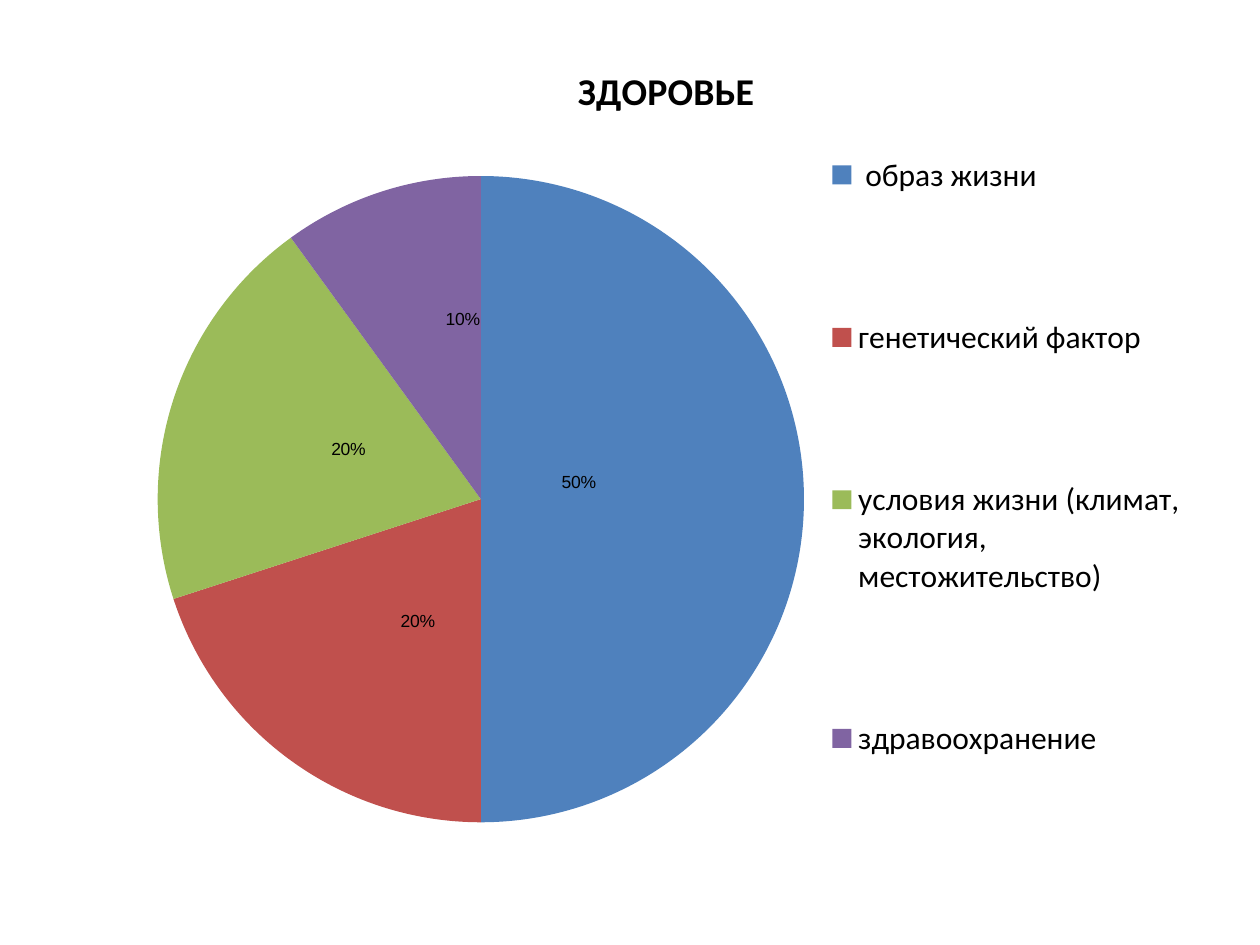
from dataclasses import dataclass
from typing import Optional

from lxml import etree
from pptx import Presentation
from pptx.chart.chart import Chart
from pptx.chart.data import CategoryChartData
from pptx.dml.color import RGBColor
from pptx.enum import chart as kinds
from pptx.oxml.ns import qn
from pptx.util import Inches, Pt

BLACK = RGBColor(0x00, 0x00, 0x00)
BLUE = RGBColor(0x4F, 0x81, 0xBD)
RED = RGBColor(0xC0, 0x50, 0x4D)
GREEN = RGBColor(0x9B, 0xBB, 0x59)
PURPLE = RGBColor(0x80, 0x64, 0xA2)
TITLE = "ЗДОРОВЬЕ"


@dataclass(frozen=True)
class Factor:
    name: str
    share: float
    color: RGBColor
    shift_x: float  # label shift, as a fraction of the chart
    shift_y: float


FACTORS = [
    Factor(" образ жизни", 0.5, BLUE, -0.06, -0.02),
    Factor("генетический фактор", 0.2, RED, 0.03, -0.01),
    Factor("условия жизни (климат, экология, местожительство)", 0.2, GREEN, 0.02, 0),
    Factor("здравоохранение", 0.1, PURPLE, 0.03, -0.03),
]


def set_layout(owner, x: float, y: float, w: Optional[float] = None,
               h: Optional[float] = None, after: Optional[str] = None,
               inner: bool = False, edge: bool = True) -> None:
    """Place a chart part by fractions of the chart's size."""
    for old in owner.findall(qn("c:layout")):
        owner.remove(old)
    layout = etree.Element(qn("c:layout"))
    manual = etree.SubElement(layout, qn("c:manualLayout"))
    settings = []
    if inner:
        settings.append(("layoutTarget", "inner"))
    if edge:
        settings += [("xMode", "edge"), ("yMode", "edge")]
    settings += [("x", x), ("y", y), ("w", w), ("h", h)]
    for tag, value in settings:
        if value is not None:
            etree.SubElement(manual, qn(f"c:{tag}")).set("val", str(value))
    if after:
        owner.find(qn(after)).addnext(layout)
    else:
        owner.insert(0, layout)


def add_title(chart: Chart) -> None:
    chart.has_title = True
    frame = chart.chart_title.text_frame
    frame.text = TITLE
    font = frame.paragraphs[0].font
    font.name, font.size, font.bold = "Calibri", Pt(21.6), True
    font.color.rgb = BLACK
    set_layout(chart.element.xpath("c:chart/c:title")[0], 0.41, 0.03, after="c:tx")


def add_legend(chart: Chart) -> None:
    chart.has_legend = True
    legend = chart.legend
    legend.position = kinds.XL_LEGEND_POSITION.RIGHT
    legend.include_in_layout = False
    set_layout(chart.element.xpath("c:chart/c:legend")[0], 0.64, 0, 0.36, 1,
               after="c:legendPos")


def style_slices(chart: Chart) -> None:
    chart.plots[0].vary_by_categories = True
    series = chart.plots[0].series[0]
    for index, factor in enumerate(FACTORS):
        point = series.points[index]
        point.format.fill.solid()
        point.format.fill.fore_color.rgb = factor.color
        label = point.data_label
        label.position = kinds.XL_LABEL_POSITION.CENTER
        label.font.name, label.font.size = "Arial", Pt(10)
        label.font.color.rgb = BLACK
    for node, factor in zip(chart.element.xpath(".//c:dLbl"), FACTORS):
        set_layout(node, factor.shift_x, factor.shift_y, after="c:idx", edge=False)


def main() -> None:
    deck = Presentation()
    deck.slide_width, deck.slide_height = Inches(10), Inches(7.5)
    page = deck.slides.add_slide(deck.slide_layouts[6])

    # Pie of health factors
    data = CategoryChartData(number_format="0%")
    data.categories = [factor.name for factor in FACTORS]
    data.add_series(TITLE, [factor.share for factor in FACTORS])
    chart = page.shapes.add_chart(
        kinds.XL_CHART_TYPE.PIE, Inches(1.08), Inches(0.25),
        Inches(8.42), Inches(6.75), data).chart
    chart.font.name, chart.font.size = "Calibri", Pt(18)
    chart.font.color.rgb = BLACK
    style_slices(chart)
    set_layout(chart.element.xpath("c:chart/c:plotArea")[0],
               0.02, 0.17, 0.61, 0.76, inner=True)

    # Heading and key
    add_title(chart)
    add_legend(chart)
    deck.save("out.pptx")


if __name__ == "__main__":
    main()
